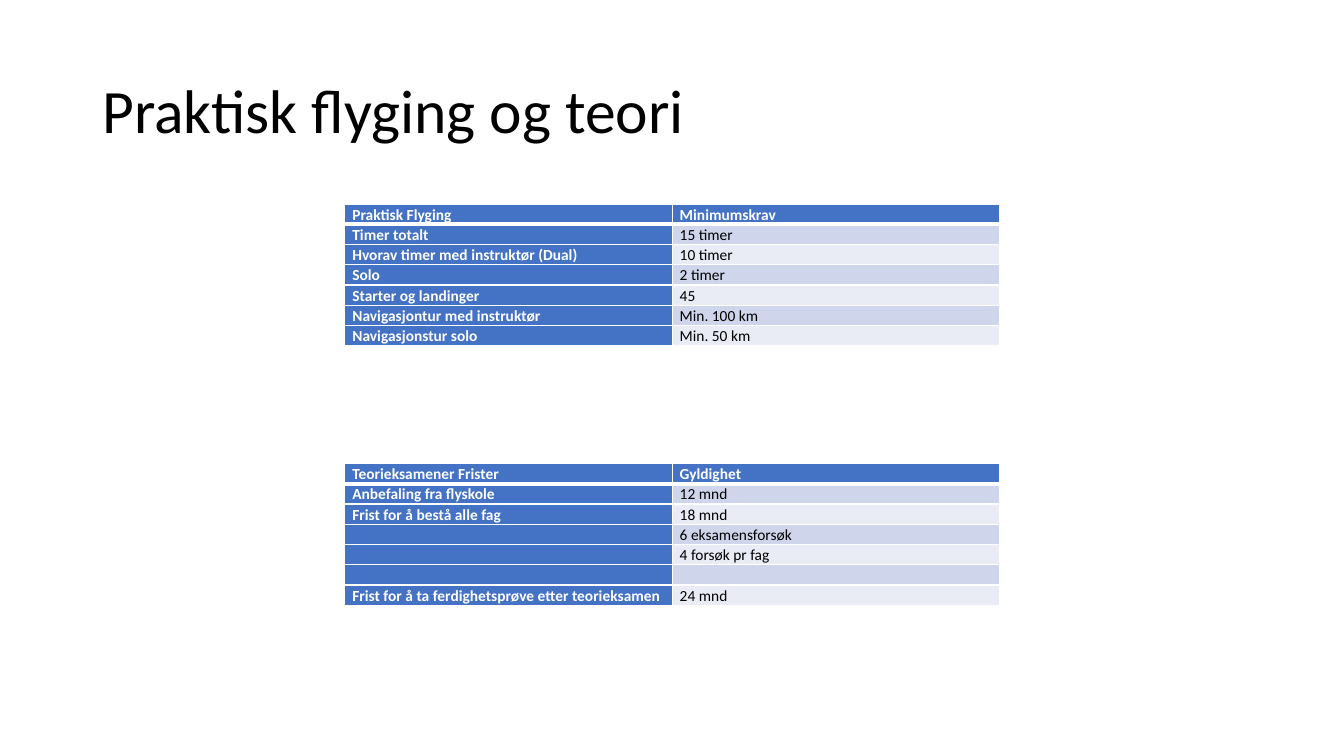
from lxml import etree
from pptx import Presentation
from pptx.dml.color import RGBColor
from pptx.enum.text import MSO_ANCHOR
from pptx.oxml.ns import qn
from pptx.util import Cm, Pt

MIDDLE = MSO_ANCHOR.MIDDLE
COLORS = {
    "text": "000000",
    "white": "FFFFFF",
    "accent": "4472C4",
    "band_dark": "CFD5EA",
    "band_light": "E9EBF5",
}
TABLE_LEFT = 8.69
COLUMN_WIDTH = 8.25
ROW_HEIGHT = 0.51

FLYING_ROWS = [
    ("Praktisk Flyging", "Minimumskrav"),
    ("Timer totalt", "15 timer"),
    ("Hvorav timer med instruktør (Dual)", "10 timer"),
    ("Solo", "2 timer"),
    ("Starter og landinger", "45"),
    ("Navigasjontur med instruktør", "Min. 100 km"),
    ("Navigasjonstur solo", "Min. 50 km"),
]
THEORY_ROWS = [
    ("Teorieksamener Frister", "Gyldighet"),
    ("Anbefaling fra flyskole", "12 mnd"),
    ("Frist for å bestå alle fag", "18 mnd"),
    ("", "6 eksamensforsøk"),
    ("", "4 forsøk pr fag"),
    ("", ""),
    ("Frist for å ta ferdighetsprøve etter teorieksamen", "24 mnd"),
]


class SlideBuilder:
    font = "Calibri"
    title_size = 44
    table_size = 11

    def __init__(self, slide):
        self.slide = slide

    def color(self, name):
        return RGBColor.from_string(COLORS[name])

    def set_text(self, paragraph, text, size, color, bold=False):
        paragraph.text = text
        for run in paragraph.runs:
            run.font.name = self.font
            run.font.size = Pt(size)
            run.font.bold = bold
            run.font.color.rgb = self.color(color)

    def title(self, text, left, top, width, height):
        shape = self.slide.shapes.add_textbox(Cm(left), Cm(top), Cm(width), Cm(height))
        frame = shape.text_frame
        frame.word_wrap = True
        frame.vertical_anchor = MIDDLE
        paragraph = frame.paragraphs[0]
        paragraph.line_spacing = 0.9
        self.set_text(paragraph, text, self.title_size, "text")

    def table(self, rows, top):
        column_count = len(rows[0])
        shape = self.slide.shapes.add_table(
            len(rows), column_count, Cm(TABLE_LEFT), Cm(top),
            Cm(COLUMN_WIDTH * column_count), Cm(ROW_HEIGHT * len(rows)))
        table = shape.table
        for column in table.columns:
            column.width = Cm(COLUMN_WIDTH)
        for row_index, row in enumerate(rows):
            table.rows[row_index].height = Cm(ROW_HEIGHT)
            for column_index, text in enumerate(row):
                self.cell(table.cell(row_index, column_index), text, row_index, column_index)

    def cell(self, cell, text, row_index, column_index):
        is_heading = row_index == 0 or column_index == 0
        band = "band_dark" if row_index % 2 else "band_light"
        cell.margin_left = cell.margin_right = Cm(0.19)
        cell.margin_top = cell.margin_bottom = 0
        cell.fill.solid()
        cell.fill.fore_color.rgb = self.color("accent" if is_heading else band)
        self.borders(cell, top=3 if row_index == 1 else 1, bottom=3 if row_index == 0 else 1)
        paragraph = cell.text_frame.paragraphs[0]
        paragraph.line_spacing = 1.07
        paragraph.space_after = Pt(8)
        self.set_text(paragraph, text, self.table_size, "white" if is_heading else "text", is_heading)
        if not text:
            # An empty paragraph takes its height from the end mark.
            end_mark = etree.SubElement(paragraph._p, qn("a:endParaRPr"))
            end_mark.set("sz", str(self.table_size * 100))

    def borders(self, cell, top, bottom):
        """Draw white cell borders; the line elements must precede the fill."""
        properties = cell._tc.get_or_add_tcPr()
        widths = {"a:lnL": 1, "a:lnR": 1, "a:lnT": top, "a:lnB": bottom}
        for position, (tag, width) in enumerate(widths.items()):
            line = etree.Element(qn(tag), w=str(Pt(width)))
            fill = etree.SubElement(line, qn("a:solidFill"))
            etree.SubElement(fill, qn("a:srgbClr"), val=COLORS["white"])
            properties.insert(position, line)


def main():
    presentation = Presentation()
    presentation.slide_width = Cm(33.87)
    presentation.slide_height = Cm(19.05)
    builder = SlideBuilder(presentation.slides.add_slide(presentation.slide_layouts[6]))
    builder.title("Praktisk flyging og teori", 2.33, 1.01, 29.21, 3.68)
    builder.table(FLYING_ROWS, 5.14)
    builder.table(THEORY_ROWS, 11.68)
    presentation.save("out.pptx")


if __name__ == "__main__":
    main()
